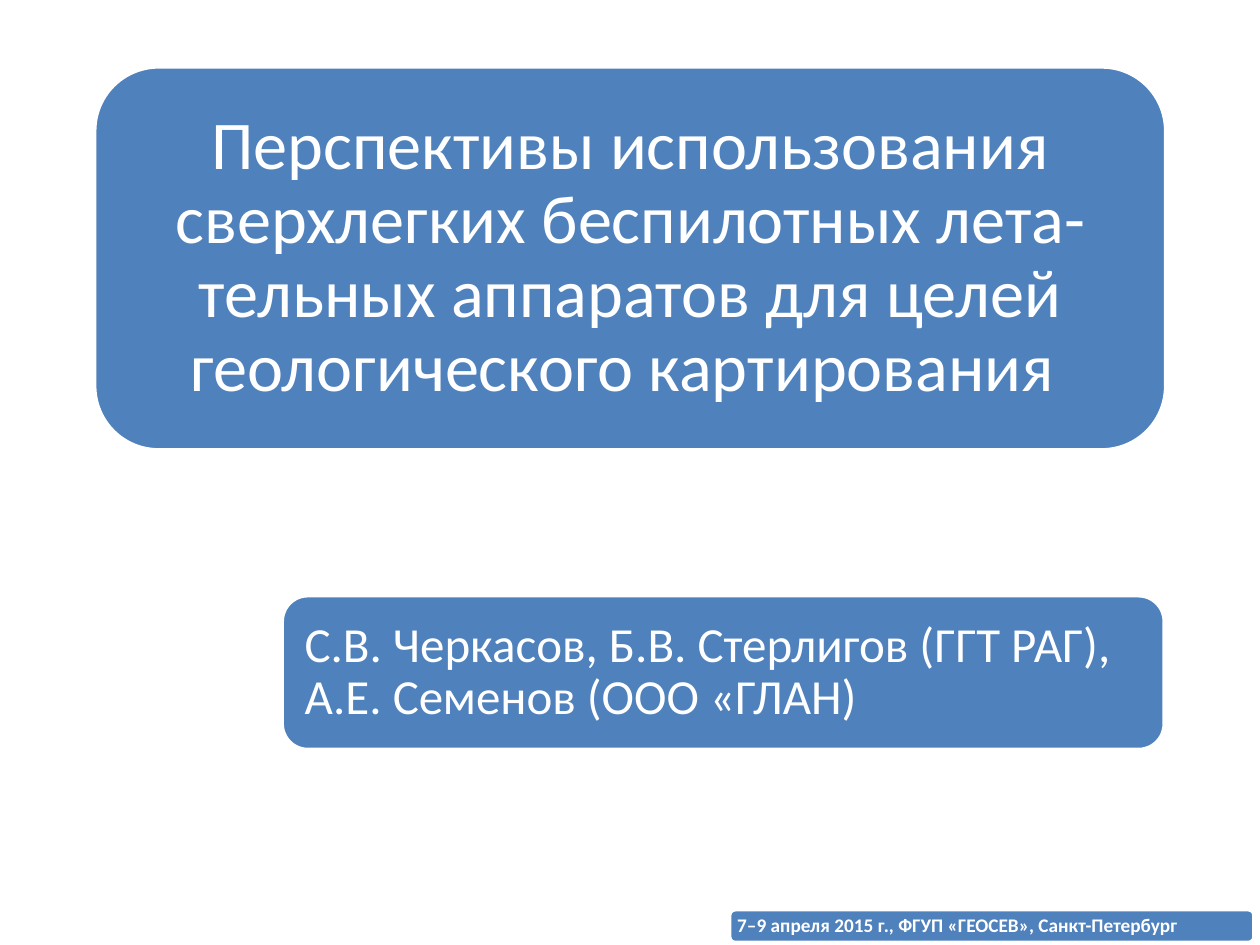
"""Build the title slide of a talk on ultralight drones for geological mapping."""
from pptx import Presentation
from pptx.dml.color import RGBColor
from pptx.enum.shapes import MSO_SHAPE
from pptx.enum.text import MSO_ANCHOR, PP_ALIGN
from pptx.util import Cm, Pt

FONT = "Calibri"
BLUE, WHITE = "4F81BD", "FFFFFF"

PANELS = [
    {"wording": "Перспективы использования сверхлегких беспилотных лета-тельных "
                "аппаратов для целей геологического картирования ",
     "place": (1.91, 1.35, 21.59, 7.72), "inset": 0.41,
     "size": 39, "bold": False, "align": PP_ALIGN.CENTER},
    {"wording": "С.В. Черкасов, Б.В. Стерлигов (ГГТ РАГ), А.Е. Семенов (ООО «ГЛАН)",
     "place": (5.69, 12.01, 17.78, 3.1), "inset": 0.3,
     "size": 28, "bold": False, "align": PP_ALIGN.LEFT},
    {"wording": "7–9 апреля 2015 г., ФГУП «ГЕОСЕВ», Санкт-Петербург",
     "place": (14.71, 18.34, 10.57, 0.66), "inset": 0.12,
     "size": 11, "bold": True, "align": PP_ALIGN.LEFT},
]


def color(value):
    return RGBColor.from_string(value)


def add_panel(slide, wording, place, inset, size, bold, align):
    panel = slide.shapes.add_shape(MSO_SHAPE.ROUNDED_RECTANGLE, *map(Cm, place))
    panel.shadow.inherit = False
    panel.fill.solid()
    panel.fill.fore_color.rgb = color(BLUE)
    panel.line.color.rgb = color(WHITE)
    panel.line.width = Pt(2)

    frame = panel.text_frame
    frame.text = wording
    frame.word_wrap = True
    frame.vertical_anchor = MSO_ANCHOR.MIDDLE
    frame.margin_left = frame.margin_right = Cm(inset)
    frame.margin_top = frame.margin_bottom = Cm(inset)

    paragraph = frame.paragraphs[0]
    paragraph.alignment = align
    paragraph.line_spacing = 0.9
    font = paragraph.runs[0].font
    font.name = FONT
    font.size = Pt(size)
    font.bold = bold
    font.color.rgb = color(WHITE)


def main():
    presentation = Presentation()
    presentation.slide_width, presentation.slide_height = Cm(25.4), Cm(19.05)
    slide = presentation.slides.add_slide(presentation.slide_layouts[6])
    for panel in PANELS:
        add_panel(slide, **panel)
    presentation.save("out.pptx")


if __name__ == "__main__":
    main()
